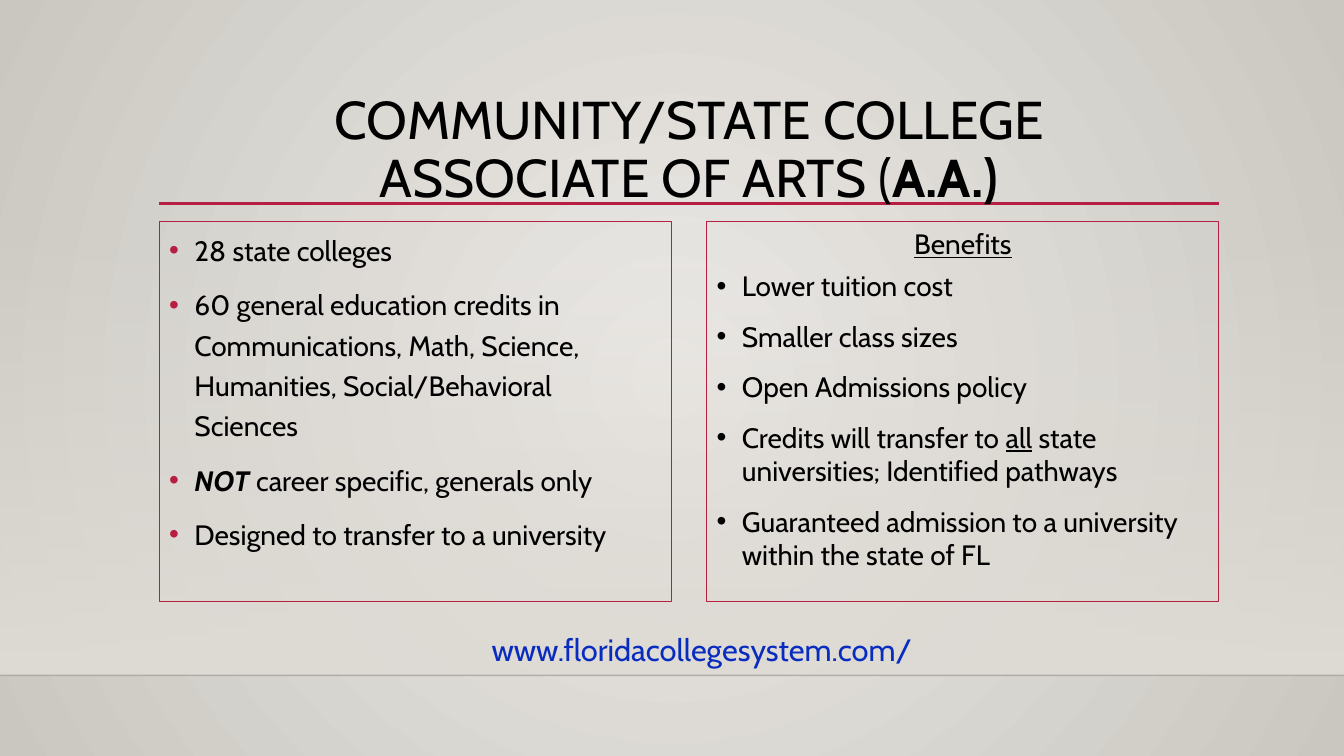
from lxml.etree import SubElement
from pptx import Presentation
from pptx.dml.color import RGBColor
from pptx.enum.shapes import MSO_CONNECTOR, MSO_SHAPE
from pptx.enum.text import MSO_ANCHOR, MSO_AUTO_SIZE, PP_ALIGN
from pptx.oxml.ns import qn
from pptx.util import Inches, Pt

FONT = "Cabin"
COLORS = {
    "text": "000000", "accent": "B71E42", "link": "092CC0", "floor": "000001",
    "center": "ECEAE7", "edge": "CAC7C1", "wall": "DFDBD5",
}

# Each paragraph is a list of (text, style) runs: b bold, i italic, u underlined.
TITLE = [("COMMUNITY/STATE COLLEGE\vASSOCIATE OF ARTS (", ""), ("A.A.)", "b")]
FACTS = [
    [("28 state colleges", "")],
    [("60 general education credits in Communications, Math, Science, "
      "Humanities, Social/Behavioral Sciences", "")],
    [("NOT ", "bi"), ("career specific, generals only", "")],
    [("Designed to transfer to a university", "")],
]
BENEFITS_HEADING = [("Benefits", "u")]
BENEFITS = [
    [("Lower tuition cost", "")],
    [("Smaller class sizes", "")],
    [("Open Admissions policy", "")],
    [("Credits will transfer to ", ""), ("all", "u"),
     (" state universities; Identified pathways", "")],
    [("Guaranteed admission to a university within the state of FL", "")],
]
WEBSITE = [("www.floridacollegesystem.com/", "")]

# Layout in inches: two equal columns between the margins
WIDTH, HEIGHT = 13.33, 7.5
LEFT, CONTENT_WIDTH, GUTTER = 1.58, 10.51, 0.35
COLUMN_WIDTH = (CONTENT_WIDTH - GUTTER) / 2
RIGHT_COLUMN = LEFT + COLUMN_WIDTH + GUTTER
TITLE_TOP, TITLE_HEIGHT, RULE_TOP = 0.88, 1.16, 2.02
COLUMN_TOP, COLUMN_BOTTOM, FLOOR_TOP = 2.2, 5.97, 6.7
WEBSITE_TOP, WEBSITE_WIDTH, WEBSITE_HEIGHT = 5.83, 10.76, 0.84


def rgb(name):
    return RGBColor.from_string(COLORS[name])


def add_alpha(color_element, percent):
    SubElement(color_element, qn("a:alpha"), val=str(percent * 1000))


def set_gradient(fill, stops):
    """Give a fill two theme-free stops and return its gradFill element's parts."""
    fill.gradient()
    for stop, name in zip(fill.gradient_stops, stops):
        stop.color.rgb = rgb(name)
    for stop, position in zip(fill.gradient_stops, (0, 1)):
        stop.position = position


def paint_background(slide):
    set_gradient(slide.background.fill, ("center", "edge"))
    gradient = next(slide._element.iter(qn("a:gradFill")))
    gradient.remove(gradient.find(qn("a:lin")))
    radial = SubElement(gradient, qn("a:path"), path="circle")
    SubElement(radial, qn("a:fillToRect"), l="50000", t="50000", r="50000", b="50000")


def add_wall(slide):
    """Panel that fades in from clear at the top to solid at the floor."""
    wall = slide.shapes.add_shape(
        MSO_SHAPE.RECTANGLE, 0, Inches(COLUMN_TOP),
        Inches(WIDTH), Inches(FLOOR_TOP - COLUMN_TOP))
    wall.shadow.inherit = False
    wall.line.fill.background()
    set_gradient(wall.fill, ("wall", "wall"))
    gradient = next(wall._element.iter(qn("a:gradFill")))
    gradient.find(qn("a:lin")).set("ang", "5400000")
    add_alpha(next(gradient.iter(qn("a:srgbClr"))), 0)


def add_rule(slide, left, right, top, color, weight, opacity=100):
    rule = slide.shapes.add_connector(
        MSO_CONNECTOR.STRAIGHT, Inches(left), Inches(top), Inches(right), Inches(top))
    rule.line.color.rgb = rgb(color)
    rule.line.width = Pt(weight)
    if opacity < 100:
        add_alpha(next(rule._element.iter(qn("a:srgbClr"))), opacity)
    SubElement(rule._element.spPr, qn("a:effectLst"))


def add_box(slide, left, top, width, height, bordered=True):
    box = slide.shapes.add_textbox(
        Inches(left), Inches(top), Inches(width), Inches(height))
    box.text_frame.word_wrap = True
    if bordered:
        box.line.color.rgb = rgb("accent")
        box.line.width = Pt(0.75)
    return box.text_frame


def write_runs(paragraph, runs, size, color="text", align=PP_ALIGN.LEFT):
    paragraph.alignment = align
    paragraph.text = "".join(text for text, style in runs[:1])
    for text, style in runs[1:]:
        paragraph.add_run().text = text
    styles = [runs[0][1]] * (len(paragraph.runs) - len(runs))
    styles += [style for text, style in runs]
    for run, style in zip(paragraph.runs, styles):
        run.font.name = FONT
        run.font.size = Pt(size)
        run.font.color.rgb = rgb(color)
        run.font.bold = "b" in style
        run.font.italic = "i" in style
        run.font.underline = "u" in style


def write_bullet(paragraph, runs, bullet_color, line_spacing, before, after):
    paragraph.line_spacing = line_spacing
    paragraph.space_before = Pt(before)
    paragraph.space_after = Pt(after)
    properties = paragraph._p.get_or_add_pPr()
    properties.set("marL", str(Inches(0.25)))
    properties.set("indent", str(-Inches(0.25)))
    color = SubElement(properties, qn("a:buClr"))
    SubElement(color, qn("a:srgbClr"), val=COLORS[bullet_color])
    SubElement(properties, qn("a:buFont"), typeface="Arial")
    SubElement(properties, qn("a:buChar"), char="•")
    write_runs(paragraph, runs, 20)


def write_title(slide):
    title = slide.shapes.title
    title.left, title.top = Inches(LEFT), Inches(TITLE_TOP)
    title.width, title.height = Inches(CONTENT_WIDTH), Inches(TITLE_HEIGHT)
    frame = title.text_frame
    frame.word_wrap = True
    frame.auto_size = MSO_AUTO_SIZE.NONE
    frame.vertical_anchor = MSO_ANCHOR.TOP
    paragraph = frame.paragraphs[0]
    paragraph.line_spacing = 0.9
    paragraph.space_before = Pt(0)
    write_runs(paragraph, TITLE, 38, align=PP_ALIGN.CENTER)
    slide.shapes._spTree.append(title._element)  # bring in front of the rule


def main():
    presentation = Presentation()
    presentation.slide_width, presentation.slide_height = Inches(WIDTH), Inches(HEIGHT)
    slide = presentation.slides.add_slide(presentation.slide_layouts[5])

    paint_background(slide)
    add_wall(slide)
    add_rule(slide, 0, WIDTH, FLOOR_TOP, "floor", 1, opacity=20)
    add_rule(slide, LEFT, LEFT + CONTENT_WIDTH, RULE_TOP, "accent", 2.5)
    write_title(slide)

    column_height = COLUMN_BOTTOM - COLUMN_TOP
    facts = add_box(slide, LEFT, COLUMN_TOP, COLUMN_WIDTH, column_height)
    for index, runs in enumerate(FACTS):
        paragraph = facts.add_paragraph() if index else facts.paragraphs[0]
        write_bullet(paragraph, runs, "accent", 1.2, 10 if index else 0, 0)

    benefits = add_box(slide, RIGHT_COLUMN, COLUMN_TOP, COLUMN_WIDTH, column_height)
    write_runs(benefits.paragraphs[0], BENEFITS_HEADING, 20, align=PP_ALIGN.CENTER)
    for runs in BENEFITS:
        write_bullet(benefits.add_paragraph(), runs, "text", 1.0, 6, 6)

    website = add_box(slide, LEFT, WEBSITE_TOP, WEBSITE_WIDTH, WEBSITE_HEIGHT, bordered=False)
    website.vertical_anchor = MSO_ANCHOR.BOTTOM
    write_runs(website.paragraphs[0], WEBSITE, 22, "link", PP_ALIGN.CENTER)

    presentation.save("out.pptx")


if __name__ == "__main__":
    main()
